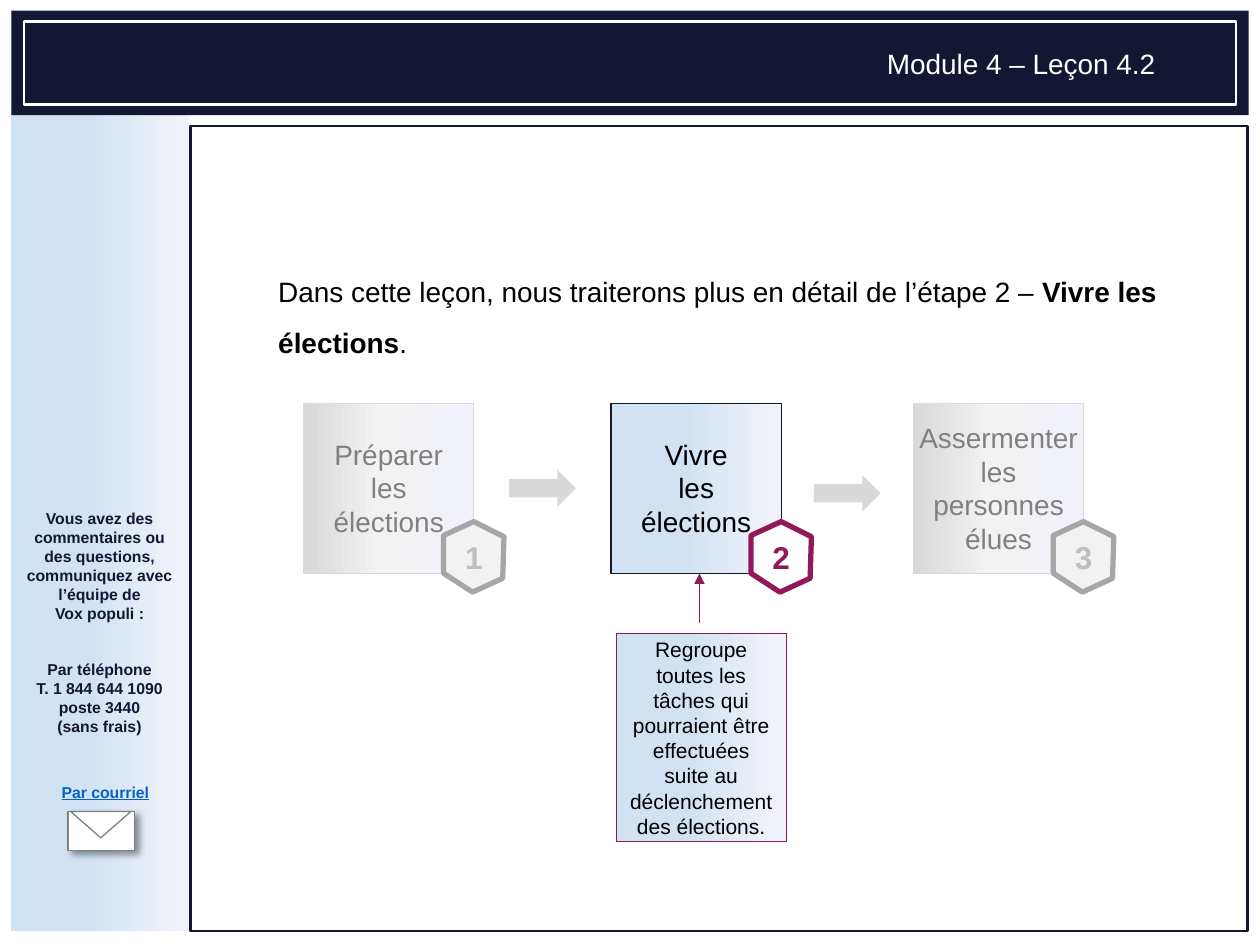
from copy import deepcopy
from dataclasses import dataclass

from lxml.etree import SubElement
from pptx import Presentation
from pptx.dml.color import RGBColor
from pptx.enum.shapes import MSO_SHAPE
from pptx.enum.text import MSO_ANCHOR, PP_ALIGN
from pptx.oxml.ns import qn
from pptx.util import Inches, Pt

COLUMNS, ROWS = 100, 75
CELL = Inches(10) // COLUMNS

NAVY, PLUM, WHITE, BLACK = "141733", "91195A", "FFFFFF", "000000"
LINK, GREY, SILVER = "0563C1", "808080", "D9D9D9"
BLUE_FADE = ["F1F2F9", "D1E3F3", "CEE1F2"]
GREY_FADE = ["F1F2F9", "F2F2F2", "D9D9D9"]
FADE_POSITIONS = [0.06, 0.56, 0.99]
HEXAGON = [(2.4, 0), (4.8, 1.2), (4.7, 4.5), (2.3, 5.6), (0, 4.1), (0, 1.1)]


@dataclass
class Box:
    """A rectangle measured in grid cells."""
    left: float
    top: float
    width: float
    height: float

    def inner(self, left, top, width, height):
        return Box(self.left + left, self.top + top, width, height)

    def lengths(self):
        return [round(value * CELL) for value in (self.left, self.top, self.width, self.height)]


def color(hex_string):
    return RGBColor.from_string(hex_string)


def set_gradient(shape, fade):
    shape.fill.gradient()
    shape.fill.gradient_angle = 180
    stops = shape.element.spPr.find(qn("a:gradFill")).find(qn("a:gsLst"))
    stops.append(deepcopy(stops[-1]))
    for stop, position, shade in zip(shape.fill.gradient_stops, FADE_POSITIONS, fade):
        stop.position = position
        stop.color.rgb = color(shade)


def style(shape, fill=None, line=None, weight=0.75):
    """Fill with one colour, a list of gradient colours or nothing."""
    shape.shadow.inherit = False
    if isinstance(fill, list):
        set_gradient(shape, fill)
    elif fill:
        shape.fill.solid()
        shape.fill.fore_color.rgb = color(fill)
    else:
        shape.fill.background()
    if line:
        shape.line.color.rgb = color(line)
        shape.line.width = Pt(weight)
    else:
        shape.line.fill.background()
    return shape


def add_shape(slide, box, kind=MSO_SHAPE.RECTANGLE, **look):
    return style(slide.shapes.add_shape(kind, *box.lengths()), **look)


def add_run(paragraph, text, size, shade, bold=False, underline=False):
    """Add a run for each line of the text."""
    for number, line in enumerate(text.split("\n")):
        if number:
            paragraph.add_line_break()
        run = paragraph.add_run()
        run.text = line
        run.font.name = "Arial"
        run.font.size = Pt(size)
        run.font.bold = bold
        run.font.underline = underline
        run.font.color.rgb = color(shade)


def add_text_box(slide, box, wrap=True, anchor=MSO_ANCHOR.TOP, align=PP_ALIGN.LEFT):
    frame = slide.shapes.add_textbox(*box.lengths()).text_frame
    frame.word_wrap = wrap
    frame.vertical_anchor = anchor
    frame.paragraphs[0].alignment = align
    return frame


def add_centered_text(slide, box, text, size, shade, bold=False, wrap=True):
    frame = add_text_box(slide, box, wrap, MSO_ANCHOR.MIDDLE, PP_ALIGN.CENTER)
    add_run(frame.paragraphs[0], text, size, shade, bold)


def add_header(slide, box):
    add_shape(slide, box, fill=NAVY)
    add_shape(slide, box.inner(1, 0.85, box.width - 2, 6.6), line=WHITE, weight=1.5)
    frame = add_text_box(slide, box.inner(68.5, 2.35, 23.7, 3.7))
    add_run(frame.paragraphs[0], "Module 4 – Leçon 4.2", 16, WHITE)


def add_envelope(slide, box):
    body = add_shape(slide, box, fill=WHITE, line=GREY)
    effects = body.element.spPr.find(qn("a:effectLst"))
    shadow = SubElement(effects, qn("a:outerShdw"), blurRad=str(Pt(4)), dist=str(Pt(3)),
                        dir="2700000", algn="tl", rotWithShape="0")
    shade = SubElement(shadow, qn("a:srgbClr"), val=BLACK)
    SubElement(shade, qn("a:alpha"), val="40000")
    flap = add_shape(slide, box.inner(0.2, 0, 4.8, 2.1), MSO_SHAPE.ISOSCELES_TRIANGLE,
                     fill=WHITE, line=GREY)
    flap.element.spPr.find(qn("a:xfrm")).set("flipV", "1")


def add_sidebar(slide, box):
    add_shape(slide, box, fill=BLUE_FADE)
    frame = add_text_box(slide, box.inner(0, 31.1, 14, 19.2), align=PP_ALIGN.CENTER)
    add_run(frame.paragraphs[0],
            "Vous avez des commentaires ou des questions, communiquez avec l’équipe de\n"
            "Vox populi :", 9, NAVY, bold=True)
    phone = frame.add_paragraph()
    phone.alignment = PP_ALIGN.CENTER
    phone.space_before = Pt(21)
    add_run(phone, "Par téléphone\nT. 1 844 644 1090\nposte 3440\n(sans frais)", 9, NAVY, bold=True)
    add_envelope(slide, box.inner(4.5, 55.6, 5.3, 3.1))
    link = add_text_box(slide, box.inner(3, 52.8, 9, 2.5), wrap=False)
    add_run(link.paragraphs[0], "Par courriel", 9, LINK, bold=True, underline=True)


def add_introduction(slide, box):
    paragraph = add_text_box(slide, box).paragraphs[0]
    paragraph.line_spacing = 1.5
    add_run(paragraph, "Dans cette leçon, nous traiterons plus en détail de l’étape 2 – ", 16, BLACK)
    add_run(paragraph, "Vivre les élections", 16, BLACK, bold=True)
    add_run(paragraph, ".", 16, BLACK)


def add_badge(slide, box, number, fill, line, shade):
    points = [((box.left + x) * CELL, (box.top + y) * CELL) for x, y in HEXAGON]
    builder = slide.shapes.build_freeform(*points[0])
    builder.add_line_segments(points[1:], close=True)
    style(builder.convert_to_shape(), fill, line, 3)
    add_centered_text(slide, box.inner(0.7, 0.8, 3.4, 4), number, 18, shade, bold=True, wrap=False)


def add_step(slide, box, number, label, active):
    fade, edge, ink = (BLUE_FADE, NAVY, BLACK) if active else (GREY_FADE, SILVER, GREY)
    badge = (WHITE, PLUM, PLUM) if active else ("F2F2F2", "A6A6A6", "BFBFBF")
    add_shape(slide, box, fill=fade, line=edge)
    add_badge(slide, box.inner(11.1, 9.4, 4.8, 5.6), number, *badge)
    add_centered_text(slide, box.inner(-1, 4.8, box.width + 2, 3.8), label, 16, ink)


def add_callout(slide, box):
    callout = add_shape(slide, box, MSO_SHAPE.LINE_CALLOUT_1, fill=BLUE_FADE, line=PLUM)
    for index, share in enumerate([-0.05, 0.49, -0.29, 0.49]):
        callout.adjustments[index] = share
    SubElement(callout.element.spPr.find(qn("a:ln")), qn("a:tailEnd"), type="triangle")
    frame = callout.text_frame
    frame.word_wrap = True
    frame.vertical_anchor = MSO_ANCHOR.MIDDLE
    frame.paragraphs[0].alignment = PP_ALIGN.CENTER
    add_run(frame.paragraphs[0],
            "Regroupe toutes les tâches qui pourraient être effectuées suite au "
            "déclenchement des élections.", 12, BLACK)


def add_content(slide, box):
    add_shape(slide, box, line=NAVY, weight=1.5)
    add_introduction(slide, box.inner(6, 10, 71.9, 8.9))
    steps = [(9, "Préparer\nles\nélections"), (33.4, "Vivre\nles\nélections"),
             (57.4, "Assermenter\nles\npersonnes\nélues")]
    for number, (left, label) in enumerate(steps, 1):
        add_step(slide, box.inner(left, 22, 13.5, 13.5), str(number), label, active=number == 2)
    for left, top in [(25.3, 27.3), (49.5, 27.7)]:
        add_shape(slide, box.inner(left, top, 5.3, 2.9), MSO_SHAPE.RIGHT_ARROW, fill=SILVER)
    add_callout(slide, box.inner(33.8, 40.3, 13.5, 16.5))


def main():
    presentation = Presentation()
    presentation.slide_width = COLUMNS * CELL
    presentation.slide_height = ROWS * CELL
    slide = presentation.slides.add_slide(presentation.slide_layouts[6])
    add_sidebar(slide, Box(0.9, 8.8, 14.1, 65.1))
    add_header(slide, Box(0.9, 0.85, 98.2, 8.3))
    add_content(slide, Box(15.1, 10, 83.9, 63.9))
    presentation.save("out.pptx")


if __name__ == "__main__":
    main()
